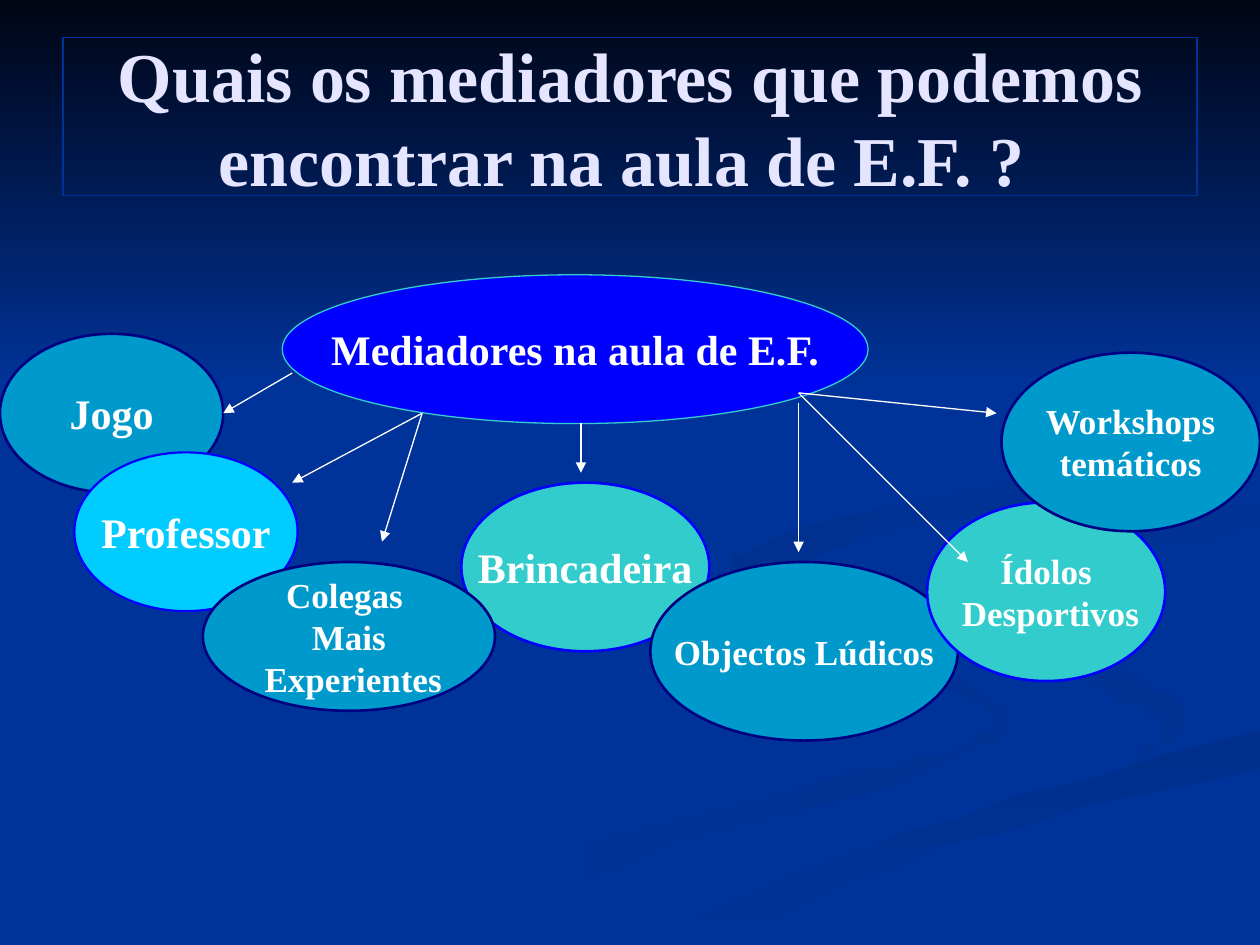
from lxml import etree
from pptx import Presentation
from pptx import util as u
from pptx.dml.color import RGBColor
from pptx.enum import shapes, text
from pptx.oxml.ns import qn

COLORS = {
    "background": "003399", "night": "000514", "title": "E5E5FF",
    "white": "FFFFFF", "blue": "0000FF", "navy": "000080",
    "teal": "33CCCC", "ocean": "0099CC", "sky": "00CCFF",
    "shade_soft": "003193", "shade_mid": "003091", "shade_deep": "002F8C",
}
FONT = "Times New Roman"

# Start colour, end colour, angle, outline in hundredths of the slide width
SWIRLS = [
    ("background", "shade_soft", 0, [
        (78, 55), (65, 51), (57, 46), (65, 51), (78, 56), (77, 59), (65, 62), (46, 67),
        (30, 75), (36, 75), (53, 67), (72, 62), (80, 58)]),
    ("background", "shade_soft", 45, [
        (94, 57), (89, 53), (76, 50), (72, 46), (76, 51), (88, 55), (92, 58), (89, 60.5), (93, 59)]),
    ("shade_deep", "background", 90, [
        (50, 75), (57, 75), (75, 67), (99.8, 61), (99.8, 58), (76, 65), (57, 72)]),
    ("shade_mid", "background", 45, [
        (78, 46), (83, 50), (81, 47), (88, 44), (99.8, 42), (99.8, 40), (85, 43)]),
    ("shade_deep", "background", 45, [
        (68, 43), (86, 39), (89, 33), (76, 23), (88, 32), (86, 37), (63, 42),
        (58, 46), (62, 50), (59, 47)]),
]

# Fill, line colour and line width of each kind of ellipse
STYLES = {
    "centre": ("blue", "teal", 0.75),
    "ocean": ("ocean", "navy", 1.5),
    "teal": ("teal", "blue", 1.5),
    "sky": ("sky", "blue", 1.25),
}

# Text lines, left, top, width, height, font size, style
MEDIATORS = [
    (["Mediadores na aula de E.F."], 5.69, 0, 11.81, 3, 24, "centre"),
    (["Jogo"], 0, 1.19, 4.5, 3.2, 24, "ocean"),
    (["Brincadeira"], 9.3, 4.19, 5, 3.4, 24, "teal"),
    (["Objectos Lúdicos"], 13.11, 5.79, 6.2, 3.6, 20, "ocean"),
    (["Ídolos", " Desportivos"], 18.69, 4.59, 4.8, 3.6, 20, "teal"),
    (["Workshops", "temáticos"], 20.19, 1.57, 5.21, 3.6, 20, "ocean"),
    (["Professor"], 1.5, 3.58, 4.5, 3.2, 24, "sky"),
    (["Colegas ", "Mais", " Experientes"], 4.09, 5.79, 5.89, 3, 20, "ocean"),
]

# Each start on the central ellipse with the heads it leads to
ARROWS = {
    (5.89, 1.98): [(4.5, 2.79)],
    (8.51, 2.79): [(5.89, 4.19), (7.7, 5.38)],
    (11.71, 2.99): [(11.71, 3.99)],
    (16.1, 2.59): [(16.1, 5.59)],
    (16.1, 2.38): [(20.09, 2.79), (19.51, 5.79)],
}


def color(name):
    return RGBColor.from_string(COLORS[name])


def smooth_outline(corners, steps=5):
    """Closed Catmull-Rom curve through the corners."""
    curve = []
    for i, p1 in enumerate(corners):
        p0, p2, p3 = (corners[(i + k) % len(corners)] for k in (-1, 1, 2))
        for t in (step / steps for step in range(steps)):
            curve.append(tuple(
                b + t * (c - a + t * (2 * a - 5 * b + 4 * c - d + t * (3 * (b - c) + d - a))) / 2
                for a, b, c, d in zip(p0, p1, p2, p3)))
    return curve


def paint_gradient(shape, start, end, angle):
    shape.shadow.inherit = False
    shape.line.fill.background()
    shape.fill.gradient()
    shape.fill.gradient_angle = (360 - angle) % 360
    for stop, name in zip(shape.fill.gradient_stops, (start, end)):
        stop.color.rgb = color(name)


def outline(shape, name, width):
    shape.shadow.inherit = False
    shape.line.color.rgb = color(name)
    shape.line.width = u.Pt(width)


def write(shape, lines, size, name, wrap):
    frame = shape.text_frame
    frame.word_wrap = wrap
    frame.vertical_anchor = text.MSO_ANCHOR.MIDDLE
    for number, line in enumerate(lines):
        paragraph = frame.add_paragraph() if number else frame.paragraphs[0]
        paragraph.alignment = text.PP_ALIGN.CENTER
        run = paragraph.add_run()
        run.text = line
        run.font.name = FONT
        run.font.size = u.Pt(size)
        run.font.bold = True
        run.font.color.rgb = color(name)


def add_backdrop(slide, left, top, width, height):
    slide.background.fill.solid()
    slide.background.fill.fore_color.rgb = color("background")
    # Swirls
    for start, end, angle, corners in SWIRLS:
        first, *rest = smooth_outline(corners)
        builder = slide.shapes.build_freeform(*first, scale=width / 100)
        builder.add_line_segments(rest, close=True)
        paint_gradient(builder.convert_to_shape(left, top), start, end, angle)
    # Dark band across the top
    band = slide.shapes.add_shape(shapes.MSO_SHAPE.RECTANGLE, left, top, width, int(height * 0.41))
    paint_gradient(band, "night", "background", 90)


def add_title(slide, left, top, width, height):
    title = slide.shapes.add_shape(shapes.MSO_SHAPE.RECTANGLE, left, top, width, height)
    title.fill.background()
    outline(title, "background", 0.75)
    write(title, ["Quais os mediadores que podemos encontrar na aula de E.F. ? "], 40, "title", True)


def add_mediator_map(slide, left, top):
    # Ellipses
    for lines, x, y, width, height, size, style in MEDIATORS:
        fill, line, weight = STYLES[style]
        ellipse = slide.shapes.add_shape(
            shapes.MSO_SHAPE.OVAL, left + u.Cm(x), top + u.Cm(y), u.Cm(width), u.Cm(height))
        ellipse.fill.solid()
        ellipse.fill.fore_color.rgb = color(fill)
        outline(ellipse, line, weight)
        write(ellipse, lines, size, "white", False)
    # Arrows
    for (x1, y1), heads in ARROWS.items():
        for x2, y2 in heads:
            arrow = slide.shapes.add_connector(
                shapes.MSO_CONNECTOR.STRAIGHT, left + u.Cm(x1), top + u.Cm(y1),
                left + u.Cm(x2), top + u.Cm(y2))
            arrow.line.color.rgb = color("white")
            arrow.line.width = u.Pt(0.75)
            line = arrow._element.spPr.find(qn("a:ln"))
            etree.SubElement(line, qn("a:tailEnd"), type="triangle")
            etree.SubElement(arrow._element.spPr, qn("a:effectLst"))


def main():
    deck = Presentation()
    deck.slide_width, deck.slide_height = u.Cm(25.4), u.Cm(19.05)
    slide = deck.slides.add_slide(deck.slide_layouts[6])
    add_backdrop(slide, 0, 0, deck.slide_width, deck.slide_height)
    add_title(slide, u.Cm(1.27), u.Cm(0.76), u.Cm(22.86), u.Cm(3.18))
    add_mediator_map(slide, 0, u.Cm(5.54))
    deck.save("out.pptx")


if __name__ == "__main__":
    main()
